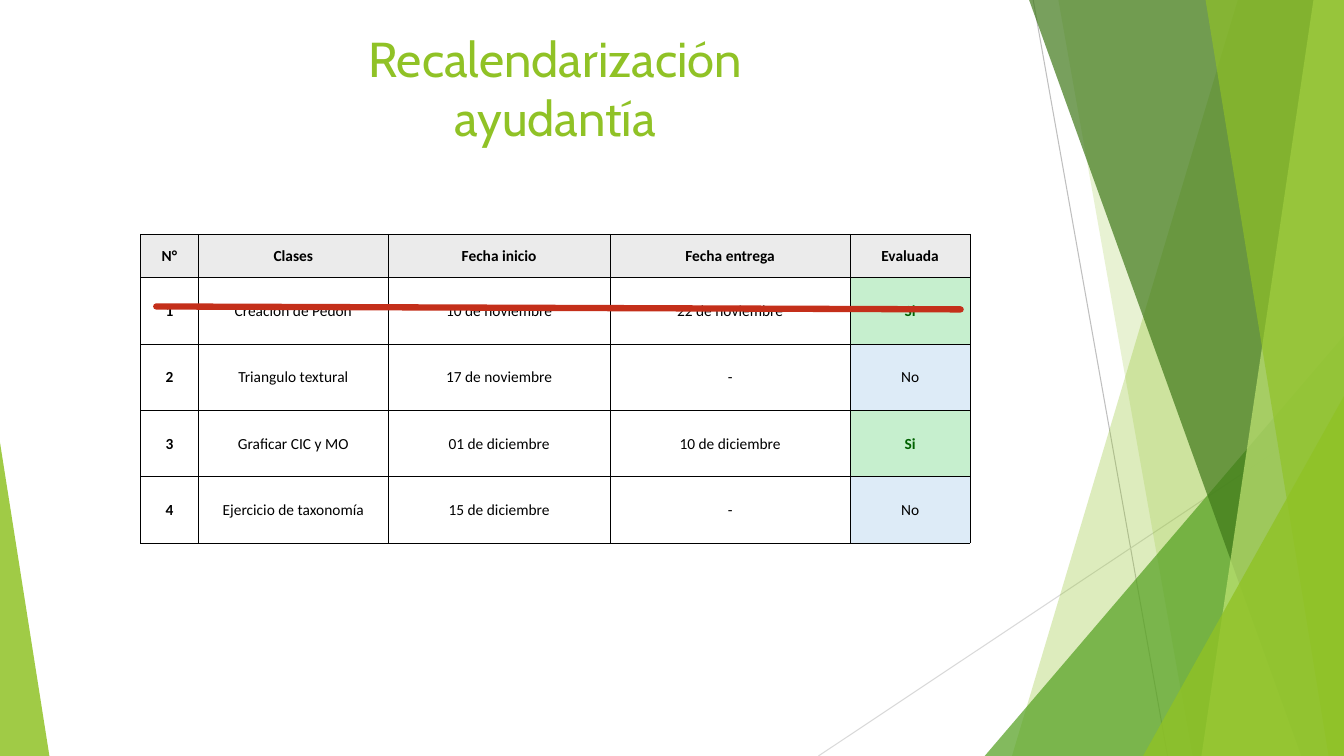
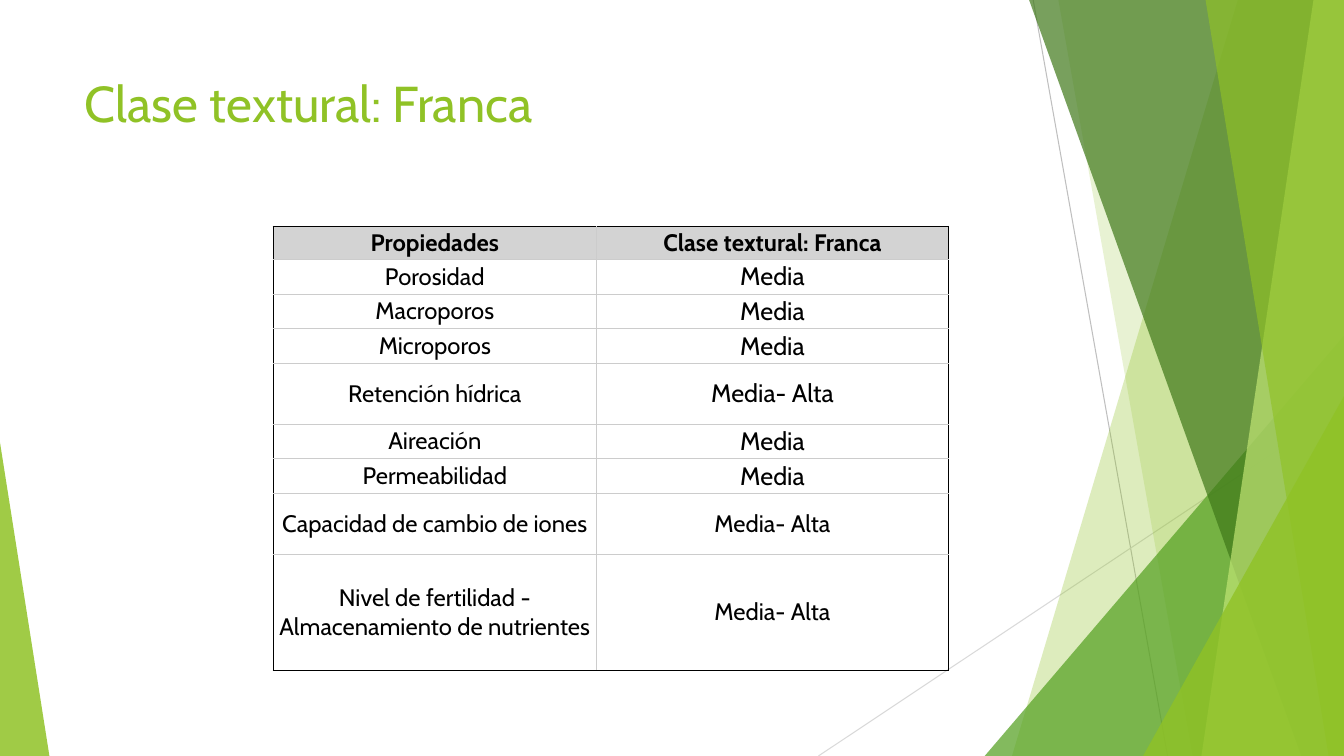
"""Build two slides on soil texture classes over a green faceted layout."""
from pptx import Presentation
from pptx.dml.color import RGBColor as Rgb
from pptx.enum.shapes import MSO_CONNECTOR as Connector, MSO_SHAPE as Preset
from pptx.enum.text import MSO_ANCHOR as Anchor, MSO_AUTO_SIZE as AutoSize, PP_ALIGN as Align
from pptx.oxml.ns import qn
from pptx.oxml.xmlchemy import OxmlElement as Element
from pptx.util import Pt

COLORS = {
    "lime": "90C226", "green": "54A021", "forest": "3F7819", "pale": "C0E474",
    "silver": "BFBFBF", "mist": "D9D9D9", "red": "C42F1A", "black": "000000",
    "rule": "CCCCCC", "header": "EBEBEB", "band": "D3D3D3",
    "yes": "C6EFCE", "yes_text": "006100", "no": "DDEBF7",
}
WIDTH, HEIGHT = 960, 540


def draw_line(shapes, ends, color, weight):
    line = shapes.add_connector(Connector.STRAIGHT, *[Pt(value) for value in ends])
    line.line.color.rgb = Rgb.from_string(COLORS[color])
    line.line.width = Pt(weight)
    line.element.spPr.append(Element("a:effectLst"))
    return line


def dress_cell(cell, text, formats, color, fill, margins, borders, weight):
    for side, value in zip(("left", "top", "right", "bottom"), margins):
        setattr(cell, f"margin_{side}", Pt(value))
    cell.vertical_anchor = Anchor.MIDDLE
    para = cell.text_frame.paragraphs[0]
    para.alignment = Align.CENTER
    span = para.add_run()
    span.text = text
    for name, value in formats.items():
        setattr(span.font, name, value)
    span.font.color.rgb = Rgb.from_string(COLORS[color])
    properties = cell._tc.get_or_add_tcPr()
    for side, border in zip("LRTB", borders):
        edge = Element(f"a:ln{side}")
        edge.set("w", str(Pt(weight)))
        solid, paint = Element("a:solidFill"), Element("a:srgbClr")
        paint.set("val", COLORS[border])
        solid.append(paint)
        edge.append(solid)
        properties.append(edge)
    if fill:
        cell.fill.solid()
        cell.fill.fore_color.rgb = Rgb.from_string(COLORS[fill])
    else:
        cell.fill.background()


deck = Presentation()
deck.slide_width, deck.slide_height = Pt(WIDTH), Pt(HEIGHT)
layout = deck.slide_layouts[5]
schedule_page = deck.slides.add_slide(layout)
texture_page = deck.slides.add_slide(layout)

facets = schedule_page.shapes.add_group_shape()
draw_line(facets.shapes, (738, 0, 834, HEIGHT), "silver", 0.75)
draw_line(facets.shapes, (WIDTH, 290, 584.6, HEIGHT), "mist", 0.75)
facet_specs = [
    ("band", (884.2, 722.9), "lime", 30),
    ("band", (756, 851.8), "lime", 20),
    ("triangle", (703.4, 239.8, 256.6, 1), "green", 72),
    ("band", (735.1, 929.5), "forest", 70),
    ("band", (938.2, 858.2), "pale", 70),
    ("band", (861.1, 949), "lime", 65),
    ("triangle", (816.5, 283, 143.5, 1), "lime", 80),
    ("triangle", (0, 316.1, 35.3, 0), "lime", 85),
]
for kind, geometry, color, opacity in facet_specs:
    if kind == "band":
        top_x, bottom_x = geometry
        outline = facets.shapes.build_freeform(Pt(top_x), 0)
        corners = [(WIDTH, 0), (WIDTH, HEIGHT), (bottom_x, HEIGHT)]
        outline.add_line_segments([(Pt(x), Pt(y)) for x, y in corners], close=True)
        facet = outline.convert_to_shape()
    else:
        left, top, width, apex = geometry
        facet = facets.shapes.add_shape(
            Preset.ISOSCELES_TRIANGLE, Pt(left), Pt(top), Pt(width), Pt(HEIGHT - top))
        facet.adjustments[0] = apex
    facet.shadow.inherit = False
    facet.line.fill.background()
    facet.fill.solid()
    facet.fill.fore_color.rgb = Rgb.from_string(COLORS[color])
    alpha = Element("a:alpha")
    alpha.set("val", str(opacity * 1000))
    facet.element.spPr.find(".//" + qn("a:srgbClr")).append(alpha)
layout.shapes.element.insert(2, facets.element)
for number, properties in enumerate(layout.element.iter(qn("p:cNvPr")), 1):
    properties.set("id", str(number))

titles = [
    (schedule_page, "Recalendarización\vayudantía", (237.6, 16.6, 318.2, 93.6), 35, Align.CENTER),
    (texture_page, "Clase textural: Franca", (53.3, 48.2, 676.8, 103.7), 36, Align.LEFT),
]
for page, text, place, size, align in titles:
    title = page.shapes.title
    for name, value in zip(("left", "top", "width", "height"), place):
        setattr(title, name, Pt(value))
    frame = title.text_frame
    frame.text = text
    frame.auto_size = AutoSize.NONE
    frame.vertical_anchor = Anchor.TOP
    para = frame.paragraphs[0]
    para.alignment = align
    for span in para.runs:
        span.font.name, span.font.size = "Cabin", Pt(size)
        span.font.color.rgb = Rgb.from_string(COLORS["lime"])

schedule = [
    ("N°", "Clases", "Fecha inicio", "Fecha entrega", "Evaluada"),
    ("1", "Creación de Pedón", "10 de noviembre", "22 de noviembre", "Si"),
    ("2", "Triangulo textural", "17 de noviembre", "-", "No"),
    ("3", "Graficar CIC y MO", "01 de diciembre", "10 de diciembre", "Si"),
    ("4", "Ejercicio de taxonomía", "15 de diciembre", "-", "No"),
]
texture = [
    ("Propiedades", "Clase textural: Franca"),
    ("Porosidad", "Media"),
    ("Macroporos", "Media"),
    ("Microporos", "Media"),
    ("Retención hídrica", "Media- Alta"),
    ("Aireación", "Media"),
    ("Permeabilidad", "Media"),
    ("Capacidad de cambio de iones", "Media- Alta"),
    ("Nivel de fertilidad - Almacenamiento de nutrientes", "Media- Alta"),
]
grids = []
for page, rows, left, top, widths, heights in [
    (schedule_page, schedule, 100.3, 167.3, (41.5, 135.5, 158.5, 171.5, 85.7), [31] + [47.4] * 4),
    (texture_page, texture, 195.1, 161.6, (231, 251.3), [23] * 4 + [43.2] + [23] * 2 + [43.2, 82.8]),
]:
    grid = page.shapes.add_table(
        len(rows), len(widths), Pt(left), Pt(top), Pt(sum(widths)), Pt(sum(heights))).table
    grid.first_row = grid.horz_banding = False
    for column, width in zip(grid.columns, widths):
        column.width = Pt(width)
    for row, height in zip(grid.rows, heights):
        row.height = Pt(height)
    grids.append(grid)
schedule_grid, texture_grid = grids

for r, row in enumerate(schedule):
    for c, text in enumerate(row):
        fill = "header" if r == 0 else {"Si": "yes", "No": "no"}.get(text)
        formats = {"name": "Calibri", "size": Pt(11), "bold": r == 0 or c == 0 or text == "Si"}
        color = "yes_text" if text == "Si" else "black"
        dress_cell(schedule_grid.cell(r, c), text, formats, color, fill,
                   (0.72, 0.72, 0.72, 0), ["black"] * 4, 0.5)

for r, row in enumerate(texture):
    for c, text in enumerate(row):
        size = 18 if c == 1 and 1 <= r <= 6 else 17
        formats = {"name": "Cabin", "size": Pt(size), "bold": r == 0}
        outer = (c == 0, c == 1, r == 0, r == len(texture) - 1)
        borders = ["black" if edge else "rule" for edge in outer]
        cell = texture_grid.cell(r, c)
        dress_cell(cell, text, formats, "black", None if r else "band",
                   (2.16, 1.44, 2.16, 1.44), borders, 0.75)
        if r == 0:
            cell.vertical_anchor = Anchor.BOTTOM

strike = draw_line(schedule_page.shapes, (111.6, 218.9, 686.2, 221), "red", 4.5)
strike.element.spPr.find(qn("a:ln")).set("cap", "rnd")

deck.save("out.pptx")
